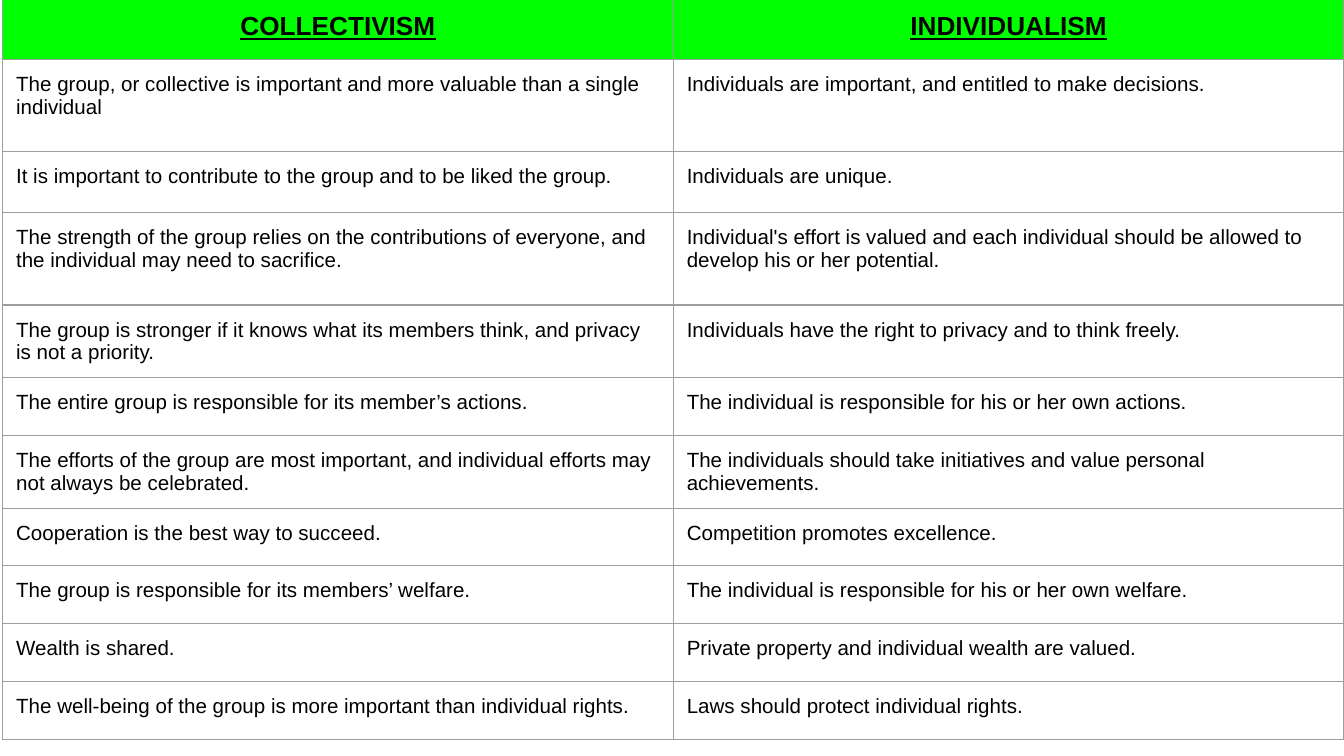
"""Build a slide with a table that sets collectivism against individualism."""
from lxml import etree
from pptx import Presentation
from pptx.dml.color import RGBColor
from pptx.enum import text
from pptx.oxml import ns
from pptx.util import Inches, Pt

GREEN = RGBColor(0x00, 0xFF, 0x00)
BLACK = RGBColor(0x00, 0x00, 0x00)
GREY = RGBColor(0x9E, 0x9E, 0x9E)

SHORT, MID, TALL = 0.43, 0.45, 0.69
ROWS = [
    (MID, "COLLECTIVISM", "INDIVIDUALISM"),
    (TALL, "The group, or collective is important and more valuable than a single individual",
     "Individuals are important, and entitled to make decisions."),
    (MID, "It is important to contribute to the group and to be liked the group.",
     "Individuals are unique."),
    (TALL, "The strength of the group relies on the contributions of everyone, "
     "and the individual may need to sacrifice.",
     "Individual's effort is valued and each individual should be allowed "
     "to develop his or her potential."),
    (SHORT, "The group is stronger if it knows what its members think, "
     "and privacy is not a priority.",
     "Individuals have the right to privacy and to think freely."),
    (SHORT, "The entire group is responsible for its member’s actions.",
     "The individual is responsible for his or her own actions."),
    (SHORT, "The efforts of the group are most important, "
     "and individual efforts may not always be celebrated.",
     "The individuals should take initiatives and value personal achievements."),
    (SHORT, "Cooperation is the best way to succeed.", "Competition promotes excellence."),
    (SHORT, "The group is responsible for its members’ welfare.",
     "The individual is responsible for his or her own welfare."),
    (SHORT, "Wealth is shared.", "Private property and individual wealth are valued."),
    (SHORT, "The well-being of the group is more important than individual rights.",
     "Laws should protect individual rights."),
]
LEFT, TOP, WIDTH = 0.02, -0.01, 9.98
PAD = Inches(0.1)


def add_edges(cell):
    props = cell._tc.get_or_add_tcPr()
    for spot, side in enumerate(("lnL", "lnR", "lnT", "lnB")):
        line = etree.Element(ns.qn("a:" + side), w=str(Pt(0.75)))
        fill = etree.SubElement(line, ns.qn("a:solidFill"))
        etree.SubElement(fill, ns.qn("a:srgbClr"), val=str(GREY))
        props.insert(spot, line)


def fill_cell(cell, words, head):
    cell.text = words
    cell.margin_left = cell.margin_right = PAD
    cell.margin_top = cell.margin_bottom = PAD
    if head:
        cell.fill.solid()
        cell.fill.fore_color.rgb = GREEN
    else:
        cell.fill.background()
    para = cell.text_frame.paragraphs[0]
    para.alignment = text.PP_ALIGN.CENTER if head else text.PP_ALIGN.LEFT
    font = para.font
    font.name = "Arial"
    font.size = Pt(14 if head else 11)
    font.bold = font.underline = head
    font.color.rgb = BLACK
    add_edges(cell)


def main():
    deck = Presentation()
    deck.slide_width = Inches(10)
    deck.slide_height = deck.slide_width * 9 // 16
    slide = deck.slides.add_slide(deck.slide_layouts[6])
    high = sum(row[0] for row in ROWS)
    table = slide.shapes.add_table(
        len(ROWS), 2, Inches(LEFT), Inches(TOP), Inches(WIDTH), Inches(high)).table
    table.first_row = table.horz_banding = False
    for r, (tall, *pair) in enumerate(ROWS):
        table.rows[r].height = Inches(tall)
        for c, words in enumerate(pair):
            fill_cell(table.cell(r, c), words, r == 0)
    deck.save("out.pptx")


if __name__ == "__main__":
    main()
